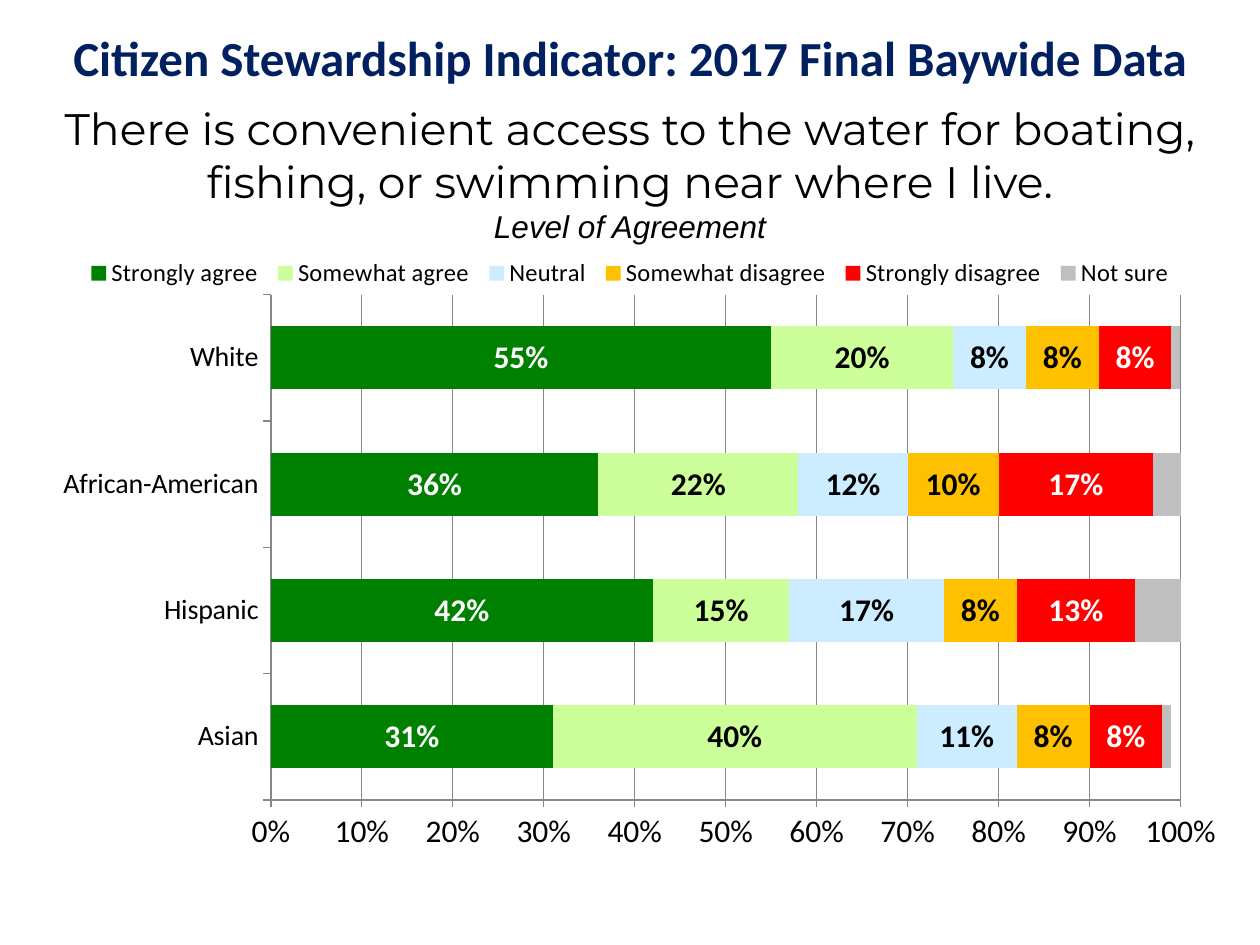
from lxml.etree import SubElement
from pptx import Presentation
from pptx.chart.data import CategoryChartData
from pptx.dml.color import RGBColor
from pptx.enum.chart import (XL_CHART_TYPE, XL_LABEL_POSITION,
                             XL_LEGEND_POSITION, XL_TICK_MARK)
from pptx.enum.text import MSO_ANCHOR, PP_ALIGN
from pptx.oxml.ns import qn
from pptx.util import Pt

NAVY = RGBColor(0x00, 0x20, 0x60)
BLACK = RGBColor(0x00, 0x00, 0x00)
WHITE = RGBColor(0xFF, 0xFF, 0xFF)
AXIS_GREY = RGBColor(0x86, 0x86, 0x86)
GREEN = RGBColor(0x00, 0x80, 0x00)
LIGHT_GREEN = RGBColor(0xCC, 0xFF, 0x99)
LIGHT_BLUE = RGBColor(0xCC, 0xEC, 0xFF)
AMBER = RGBColor(0xFF, 0xC0, 0x00)
RED = RGBColor(0xFF, 0x00, 0x00)
SILVER = RGBColor(0xBF, 0xBF, 0xBF)

GROUPS = ["Asian", "Hispanic", "African-American", "White"]
# answer, share per group, bar colour, label colour (None: no label)
ANSWERS = [
    ("Strongly agree", (0.31, 0.42, 0.36, 0.55), GREEN, WHITE),
    ("Somewhat agree", (0.40, 0.15, 0.22, 0.20), LIGHT_GREEN, BLACK),
    ("Neutral", (0.11, 0.17, 0.12, 0.08), LIGHT_BLUE, BLACK),
    ("Somewhat disagree", (0.08, 0.08, 0.10, 0.08), AMBER, BLACK),
    ("Strongly disagree", (0.08, 0.13, 0.17, 0.08), RED, WHITE),
    ("Not sure", (0.01, 0.05, 0.03, 0.01), SILVER, None),
]
# left, top, width and height as fractions of the chart's size
PLOT_AREA = (0.2, 0.07, 0.76, 0.83)
LEGEND_AREA = (0.04, 0, 0.92, 0.07)


def style_font(font, size, color=BLACK, name="Calibri", bold=False, italic=False):
    font.size = Pt(size)
    font.color.rgb = color
    font.name = name
    font.bold = bold
    font.italic = italic


def add_centred_text(slide, left, top, width, height, text, anchor):
    """Add a one-paragraph text box and return its runs."""
    box = slide.shapes.add_textbox(Pt(left), Pt(top), Pt(width), Pt(height))
    frame = box.text_frame
    frame.word_wrap = True
    frame.vertical_anchor = anchor
    paragraph = frame.paragraphs[0]
    paragraph.text = text
    paragraph.alignment = PP_ALIGN.CENTER
    return paragraph.runs


def fix_layout(chart_part, position, area, inner=False):
    """Place a part of the chart; its layout element stands at position."""
    layout = chart_part.find(qn("c:layout"))
    if layout is None:
        layout = SubElement(chart_part, qn("c:layout"))
        chart_part.insert(position, layout)
    manual = SubElement(layout, qn("c:manualLayout"))
    settings = [("layoutTarget", "inner")] if inner else []
    settings += [("xMode", "edge"), ("yMode", "edge"), *zip("xywh", area)]
    for tag, value in settings:
        SubElement(manual, qn(f"c:{tag}")).set("val", str(value))


def style_axis(axis, label_size):
    axis.major_tick_mark = XL_TICK_MARK.OUTSIDE
    axis.minor_tick_mark = XL_TICK_MARK.NONE
    axis.format.line.color.rgb = AXIS_GREY
    axis.format.line.width = Pt(0.75)
    style_font(axis.tick_labels.font, label_size)


def style_answer(series, bar_color, label_color):
    series.format.fill.solid()
    series.format.fill.fore_color.rgb = bar_color
    if label_color is None:
        return
    labels = series.data_labels
    labels.show_value = True
    labels.number_format = "0%"
    labels.number_format_is_linked = False
    labels.position = XL_LABEL_POSITION.CENTER
    style_font(labels.font, 18, label_color, bold=True)


def add_agreement_chart(slide):
    data = CategoryChartData(number_format="0%")
    data.categories = GROUPS
    for answer, shares, _, _ in ANSWERS:
        data.add_series(answer, shares)
    chart = slide.shapes.add_chart(XL_CHART_TYPE.BAR_STACKED, Pt(18), Pt(144),
                                   Pt(684), Pt(348), data).chart
    style_font(chart.font, 18)
    chart.has_title = False

    chart.has_legend = True
    chart.legend.position = XL_LEGEND_POSITION.TOP
    chart.legend.include_in_layout = False
    style_font(chart.legend.font, 14)

    chart_root = chart._chartSpace.chart
    fix_layout(chart_root.plotArea, 0, PLOT_AREA, inner=True)
    fix_layout(chart_root.find(qn("c:legend")), 1, LEGEND_AREA)

    style_axis(chart.category_axis, 16)
    shares_axis = chart.value_axis
    style_axis(shares_axis, 18)
    shares_axis.minimum_scale = 0
    shares_axis.maximum_scale = 1
    shares_axis.major_unit = 0.1
    shares_axis.tick_labels.number_format = "0%"
    shares_axis.tick_labels.number_format_is_linked = False
    shares_axis.has_major_gridlines = True
    shares_axis.major_gridlines.format.line.color.rgb = AXIS_GREY
    shares_axis.major_gridlines.format.line.width = Pt(0.75)

    bars = chart.plots[0]
    bars.gap_width = 100
    bars.overlap = 100
    bars.vary_by_categories = False
    for series, (_, _, bar_color, label_color) in zip(bars.series, ANSWERS):
        style_answer(series, bar_color, label_color)


def main():
    presentation = Presentation()
    presentation.slide_width = Pt(720)
    presentation.slide_height = Pt(540)
    slide = presentation.slides.add_slide(presentation.slide_layouts[6])

    add_agreement_chart(slide)
    title, = add_centred_text(
        slide, 27, 12, 666, 41,
        "Citizen Stewardship Indicator: 2017 Final Baywide Data", MSO_ANCHOR.TOP)
    style_font(title.font, 28, NAVY, bold=True)
    statement, measure = add_centred_text(
        slide, 22, 54, 676, 90,
        "There is convenient access to the water for boating, fishing, "
        "or swimming near where I live.\vLevel of Agreement", MSO_ANCHOR.MIDDLE)
    style_font(statement.font, 25.2, name="Montserrat")
    style_font(measure.font, 18, name="Arial", italic=True)

    presentation.save("out.pptx")


if __name__ == "__main__":
    main()
